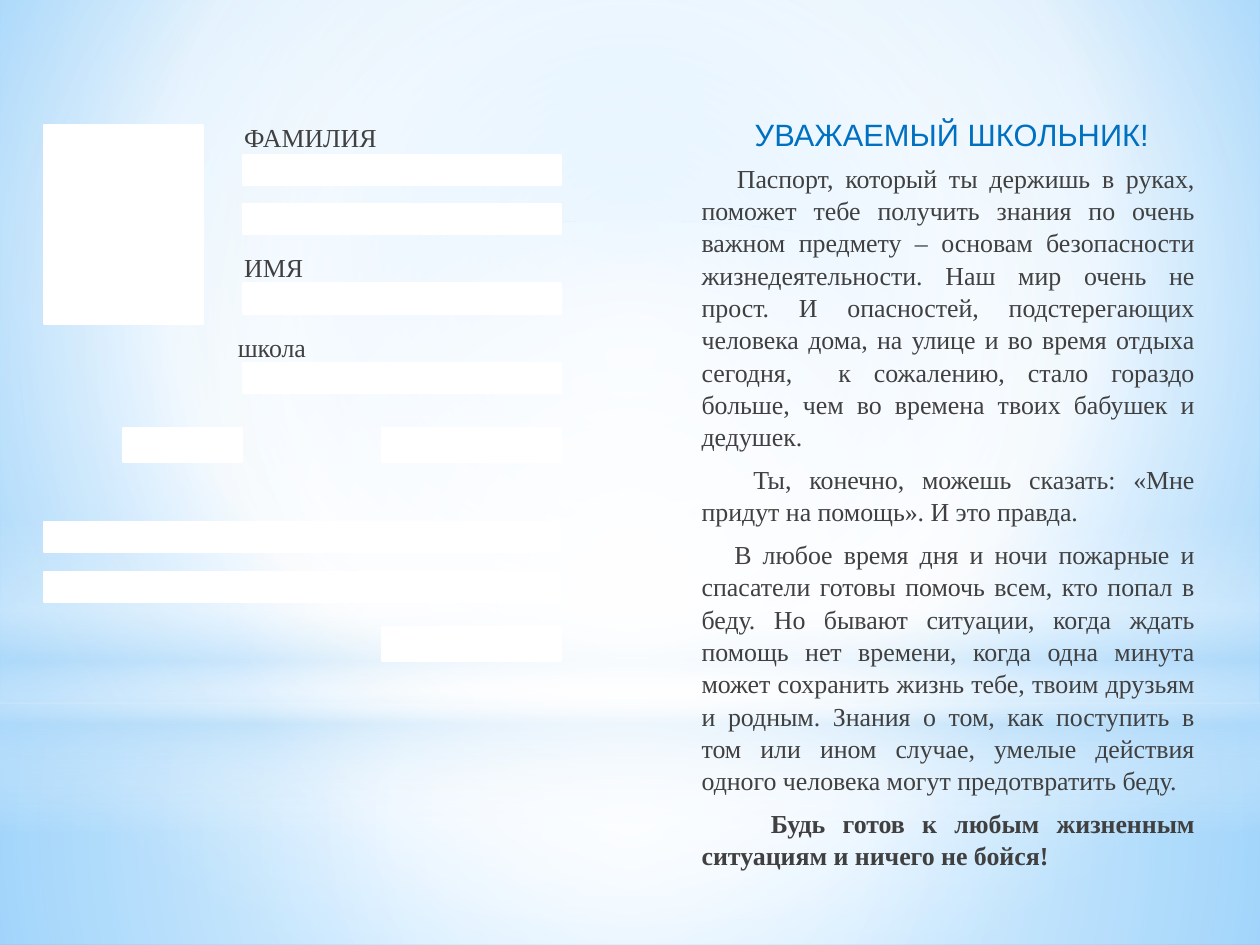
import pptx
import pptx.dml.color
import pptx.enum.shapes
import pptx.enum.text
import pptx.oxml
import pptx.oxml.ns
import pptx.util

Inches, Pt = pptx.util.Inches, pptx.util.Pt
qn = pptx.oxml.ns.qn
ALIGN = pptx.enum.text.PP_ALIGN
ANCHOR = pptx.enum.text.MSO_ANCHOR
SHAPE = pptx.enum.shapes.MSO_SHAPE

COLORS = {"white": "FFFFFF", "text": "404040", "heading": "0070C0",
          "sky": "9ED5FF", "blue": "5BB9FF", "haze": "B4DCFA"}
SERIF, SANS = "Times New Roman", "Arial"
CENTER = (50, 50, 50, 50)


def rgb(name):
    return pptx.dml.color.RGBColor.from_string(COLORS[name])


def replace_solid(parent, stops, focus=None):
    """Swap a solid fill for a gradient: circular around focus, else vertical.

    Stops are (position %, colour, opacity %).
    """
    gs = "".join(
        f'<a:gs pos="{pos * 1000}"><a:srgbClr val="{COLORS[color]}">'
        f'<a:alpha val="{alpha * 1000}"/></a:srgbClr></a:gs>'
        for pos, color, alpha in stops)
    if focus:
        sides = " ".join(f'{side}="{v * 1000}"' for side, v in zip("ltrb", focus))
        kind = f'<a:path path="circle"><a:fillToRect {sides}/></a:path>'
    else:
        kind = '<a:lin ang="5400000" scaled="0"/>'
    grad = pptx.oxml.parse_xml(
        f'<a:gradFill {pptx.oxml.ns.nsdecls("a")} rotWithShape="1">'
        f'<a:gsLst>{gs}</a:gsLst>{kind}</a:gradFill>')
    parent.replace(parent.find(qn("a:solidFill")), grad)


class PassportSlide:
    def __init__(self, prs):
        self.s = prs.slides.add_slide(prs.slide_layouts[6])

    def background(self, stops, focus):
        self.s.background.fill.solid()
        bg_pr = next(self.s.element.iter(qn("p:bgPr")))
        replace_solid(bg_pr, stops, focus)

    def shape(self, kind, box):
        sp = self.s.shapes.add_shape(kind, *map(Inches, box))
        sp.shadow.inherit = False
        sp.fill.solid()
        sp.fill.fore_color.rgb = rgb("white")
        return sp

    def glow(self, kind, box, stops, focus=None):
        sp = self.shape(kind, box)
        sp.line.fill.background()
        replace_solid(sp.element.spPr, stops, focus)

    def field(self, *box):
        sp = self.shape(SHAPE.RECTANGLE, box)
        sp.line.color.rgb = rgb("white")
        sp.line.width = Pt(1.25)

    def text_frame(self, box, anchor=ANCHOR.TOP):
        tf = self.s.shapes.add_textbox(*map(Inches, box)).text_frame
        tf.word_wrap = True
        tf.vertical_anchor = anchor
        return tf

    def run(self, p, text, size=14.8, font=SERIF, color="text", bold=False):
        r = p.add_run()
        r.text = text
        r.font.size = Pt(size)
        r.font.name = font
        r.font.bold = bold
        r.font.color.rgb = rgb(color)

    def body(self, box, paragraphs):
        """Justified paragraphs, each (first-line indent, text, bold)."""
        tf = self.text_frame(box)
        for i, (indent, text, bold) in enumerate(paragraphs):
            p = tf.add_paragraph() if i else tf.paragraphs[0]
            p.alignment = ALIGN.JUSTIFY
            p.space_before = p.space_after = Pt(3)
            p.line_spacing = 1.04
            p._p.get_or_add_pPr().set("indent", str(Inches(indent)))
            self.run(p, text, bold=bold)

    def heading(self, box, text):
        p = self.text_frame(box, ANCHOR.MIDDLE).paragraphs[0]
        p.alignment = ALIGN.CENTER
        self.run(p, text, 17.6, SANS, "heading")


GREETING = [
    (0.28, "Паспорт, который ты держишь в руках, поможет тебе получить знания "
     "по очень важном предмету – основам безопасности жизнедеятельности. Наш "
     "мир очень не прост. И опасностей, подстерегающих человека дома, на улице "
     "и во время отдыха сегодня,  к сожалению, стало гораздо больше, чем во "
     "времена твоих бабушек и дедушек.", False),
    (0.41, "Ты, конечно, можешь сказать: «Мне придут на помощь». И это правда.",
     False),
    (0.26, "В любое время дня и ночи пожарные и спасатели готовы помочь всем, "
     "кто попал в беду. Но бывают ситуации, когда ждать помощь нет времени, "
     "когда одна минута может сохранить жизнь тебе, твоим друзьям и родным. "
     "Знания о том, как поступить в том или ином случае, умелые действия одного "
     "человека могут предотвратить беду.", False),
    (0.55, "Будь готов к любым жизненным ситуациям и ничего не бойся!", True),
]


def main():
    prs = pptx.Presentation()
    prs.slide_width, prs.slide_height = Inches(10), Inches(7.5)
    page = PassportSlide(prs)

    page.background([(0, "sky", 100), (60, "white", 100), (100, "blue", 100)],
                    (20, 10, 20, 60))
    page.glow(SHAPE.RECTANGLE, (0, 5.58, 10, 1.92),
              [(0, "white", 91), (37, "white", 76), (100, "haze", 79)], CENTER)
    page.glow(SHAPE.RECTANGLE, (0, 0, 10, 5.58),
              [(0, "white", 89), (48, "white", 62), (100, "haze", 79)], CENTER)
    page.glow(SHAPE.RECTANGLE, (0, 4.12, 10, 2.5),
              [(0, "white", 0), (29, "white", 30), (45, "haze", 40),
               (55, "white", 26), (65, "haze", 60), (100, "white", 0)])
    page.glow(SHAPE.OVAL, (0, 1.75, 10, 5.58),
              [(0, "white", 100), (56, "white", 0)], CENTER)

    page.body((5.47, 1.23, 4.11, 5.35), GREETING)
    page.heading((5.31, 0.68, 4.49, 0.77), "УВАЖАЕМЫЙ ШКОЛЬНИК!")

    page.field(0.35, 0.99, 1.26, 1.58)  # photo
    for top, indent, label in [(0.91, 0.15, "ФАМИЛИЯ"), (1.94, 0.15, "ИМЯ"),
                               (2.57, 0.1, "школа")]:
        page.body((1.69, top, 1.57, 0.32), [(indent, label, False)])
    for top in (1.23, 1.62, 2.25, 2.88):
        page.field(1.93, top, 2.52, 0.24)
    for left, top, width in [(3.03, 3.4, 1.42), (0.98, 3.4, 0.94),
                             (3.03, 4.98, 1.42)]:
        page.field(left, top, width, 0.27)
    for top in (4.14, 4.54):
        page.field(0.35, top, 4.09, 0.24)

    prs.save("out.pptx")


if __name__ == "__main__":
    main()
